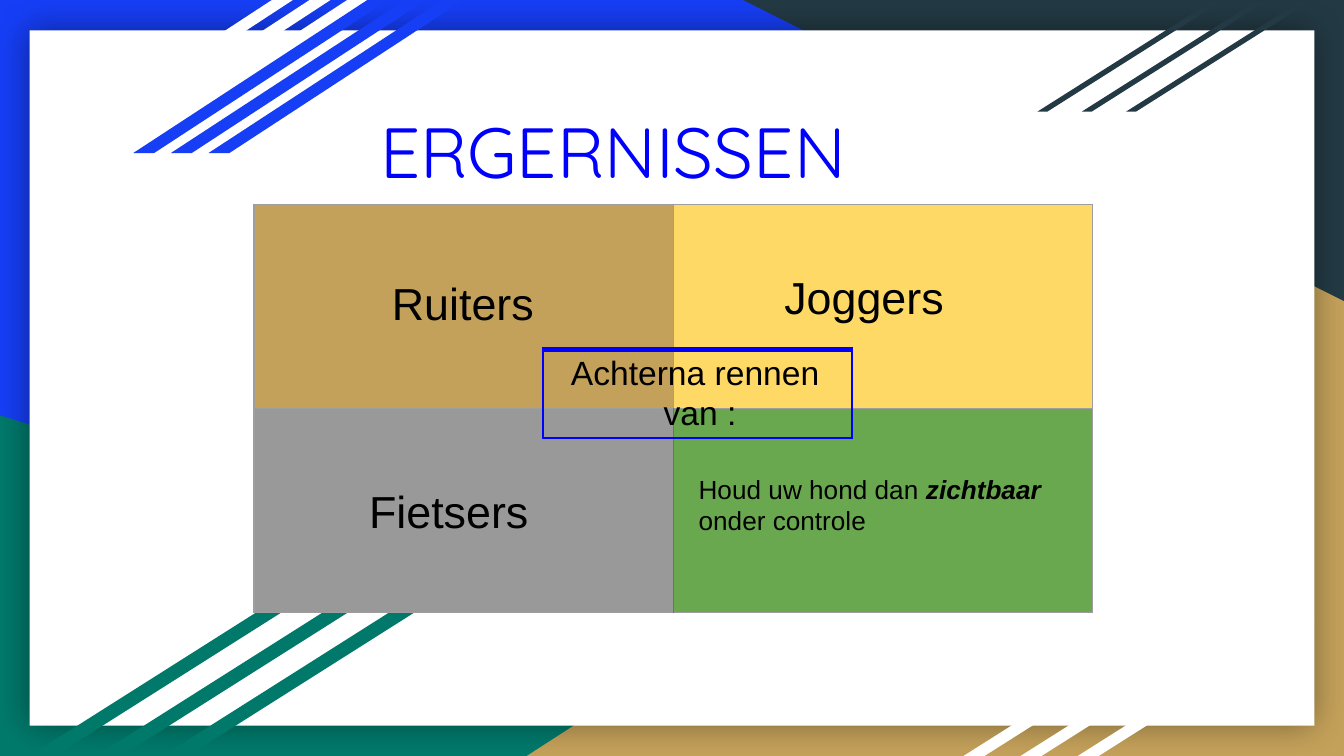
"""Build the slide of annoyances on a grid of 100 columns by 56.25 rows."""
from lxml.etree import SubElement as Sub
from pptx import Presentation
from pptx.dml.color import RGBColor
from pptx.enum.shapes import MSO_SHAPE as Kind
from pptx.enum.text import MSO_ANCHOR as Anchor, PP_ALIGN as Align
from pptx.oxml.ns import qn
from pptx.util import Inches, Pt

rgb = RGBColor.from_string
BLUE, TEAL, SAND, DARK, WHITE = "163EF5", "00796B", "C4A15A", "233A44", "FFFFFF"
INK, PURE, GRAY, PINE = "000000", "0000FF", "9E9E9E", "45818E"

deck = Presentation()
deck.slide_width, deck.slide_height = Inches(10), Inches(5.625)
unit = deck.slide_width / 100
slide = deck.slides.add_slide(deck.slide_layouts[6])
slide.background.fill.solid()
slide.background.fill.fore_color.rgb = rgb(BLUE)


def draw(kind, box, color):
    shape = slide.shapes.add_shape(kind, *[int(n * unit) for n in box])
    shape.shadow.inherit = False
    shape.fill.solid()
    shape.fill.fore_color.rgb = rgb(color)
    shape.line.fill.background()
    return shape


def write(box, text, size, align=Align.LEFT, anchor=Anchor.TOP, font="Arial", color=INK):
    frame = slide.shapes.add_textbox(*[int(n * unit) for n in box]).text_frame
    frame.word_wrap = True
    frame.vertical_anchor = anchor
    frame.margin_left = frame.margin_right = int(unit)
    frame.margin_top = frame.margin_bottom = int(unit)
    frame.text = text
    for para in frame.paragraphs:
        para.alignment = align
        para.font.size = Pt(size)
        para.font.name = font
        para.font.color.rgb = rgb(color)
    return frame


draw(Kind.RIGHT_TRIANGLE, (0, 30.9, 80.6, 25.35), TEAL)
right = draw(Kind.RIGHT_TRIANGLE, (39.2, 17, 60.8, 39.25), SAND)
right.element.spPr.find(qn("a:xfrm")).set("flipH", "1")
draw(Kind.RIGHT_TRIANGLE, (55.3, 0, 44.7, 22.4), DARK).rotation = 180

page = draw(Kind.RECTANGLE, (2.2, 2.25, 95.6, 51.75), WHITE)
glow = Sub(page.element.spPr.find(qn("a:effectLst")), qn("a:outerShdw"),
           blurRad=str(Pt(18)), dist="0", dir="0", algn="ctr", rotWithShape="0")
shade = Sub(glow, qn("a:srgbClr"), val=INK)
Sub(shade, qn("a:alpha"), val="40000")

stripes = [
    (2.8, 0, 19, 11.4, 2.8, 1.53, WHITE),
    (9.9, 0, 19, 11.4, 2.8, 1.53, BLUE),
    (77.2, 0.1, 13.7, 8.2, 3.3, 1.58, DARK),
    (71.7, 46.1, 17.6, 10.15, 4.25, 1.58, WHITE),
    (2.2, 44.4, 20.6, 11.85, 4.95, 1.58, TEAL),
]
for left, top, wide, high, step, slant, color in stripes:
    for i in (2, 1, 0):
        bar = draw(Kind.PARALLELOGRAM, (left + i * step, top, wide, high), color)
        bar.adjustments[0] = slant

title = write((20.3, 4.7, 58.6, 12.9), "ERGERNISSEN", 38, anchor=Anchor.MIDDLE,
              font="Quicksand", color=PURE)
title.margin_left = int(8 * unit)

edge = (GRAY, 0.75)
seam = (PINE, 0.75)
blue = (PURE, 1.5)
plain = [edge] * 4
tables = [
    (18.9, 15.2, 31.2, 15.2, [
        [(SAND, plain), ("FFD966", plain)],
        [("999999", [edge, seam, edge, edge]), ("6AA84F", [seam, edge, edge, edge])],
    ]),
    (40.4, 26, 23, 6.6, [[(None, [blue, blue, (PURE, 3), blue])]]),
]
for left, top, wide, high, rows in tables:
    count = len(rows)
    box = (left, top, wide * count, high * count)
    grid = slide.shapes.add_table(count, count, *[int(n * unit) for n in box]).table
    grid.first_row = grid.horz_banding = False
    for r, row in enumerate(rows):
        for c, (color, sides) in enumerate(row):
            cell = grid.cell(r, c)
            props = cell._tc.get_or_add_tcPr()
            for side, (ink, width) in zip("LRTB", sides):
                line = Sub(props, qn("a:ln" + side), w=str(Pt(width)))
                Sub(Sub(line, qn("a:solidFill")), qn("a:srgbClr"), val=ink)
            if color:
                cell.fill.solid()
                cell.fill.fore_color.rgb = rgb(color)
            else:
                cell.fill.background()

write((23.4, 19.8, 23, 5.4), "Ruiters ", 24, Align.CENTER, Anchor.MIDDLE)
write((51, 19.1, 27.5, 8.5), "Joggers ", 24, Align.CENTER)
write((21.3, 35, 25.1, 6.6), "Fietsers ", 24, Align.CENTER)

chase = write((41.5, 25.2, 26.7, 7.3), "Achterna rennen\nvan :", 18)
chase.paragraphs[1]._p.get_or_add_pPr().set("marL", str(int(6.9 * unit)))

advice = write((51, 34.2, 29.6, 8.5), "Houd uw hond dan \nonder controle", 14)
stress = advice.paragraphs[0].add_run()
stress.text = "zichtbaar"
stress.font.bold = stress.font.italic = True

deck.save("out.pptx")
